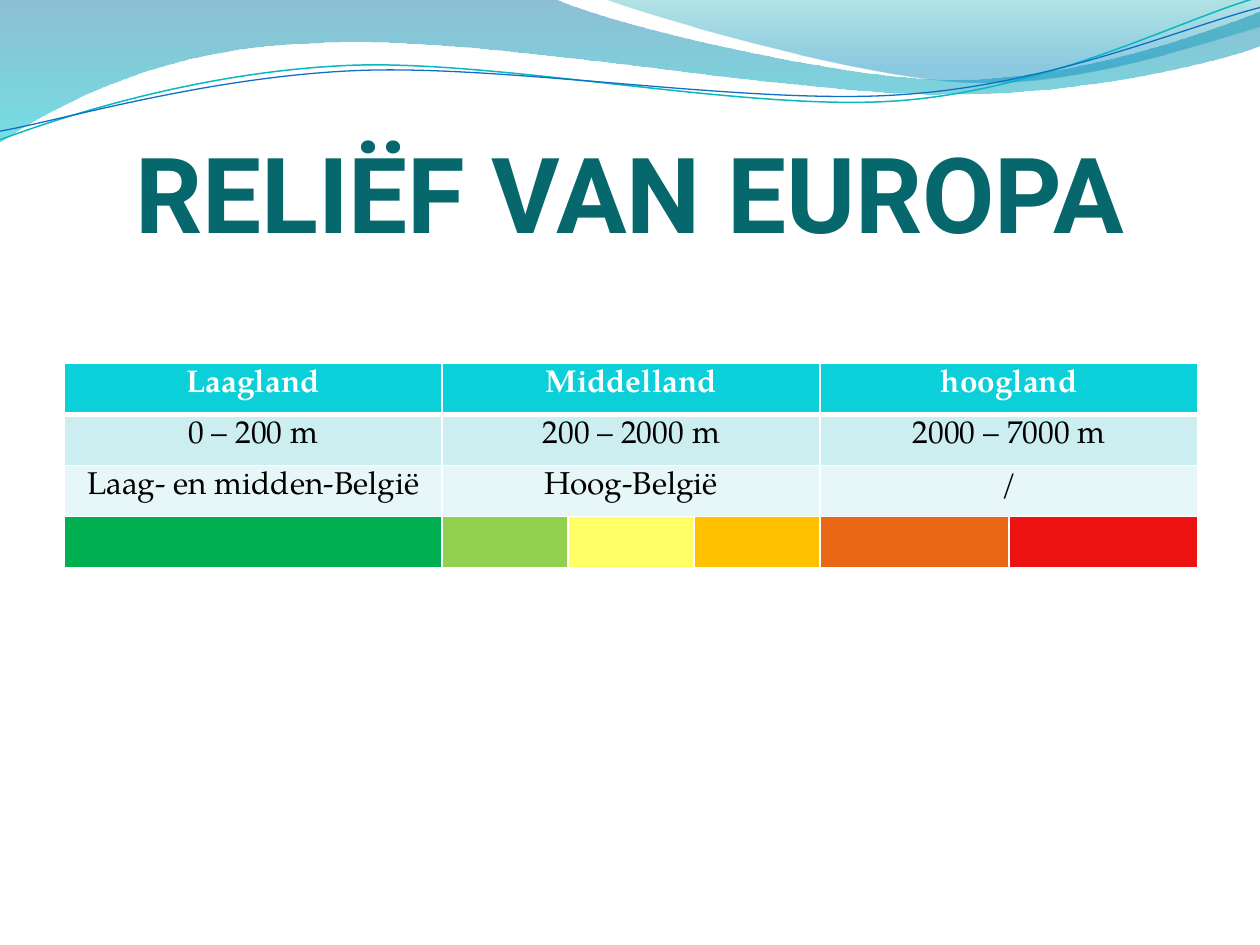
from lxml.etree import SubElement
from pptx import Presentation
from pptx.dml.color import RGBColor
from pptx.enum.text import MSO_ANCHOR as Anchor, PP_ALIGN as Align
from pptx.oxml import parse_xml
from pptx.oxml.ns import nsdecls, qn
from pptx.util import Pt

COLORS = {
    "title": "06686C", "header": "0BD0D9", "range": "CCEEF1", "belgium": "E7F7F8",
    "white": "FFFFFF", "black": "000000", "teal line": "0AB8BF", "blue line": "0F6FC6",
    "band top": "0074A1", "band bottom": "00C6CF",
    "corner top": "00A1A9", "corner bottom": "008BBF",
    "green": "00B050", "light green": "92D050", "yellow": "FFFF66",
    "amber": "FFC000", "orange": "EA6716", "red": "ED1313",
}
BAND = [
    (0, 0), (316.8, -0.7),
    (342.7, 12.2, 478.1, 45.4, 545.8, 45.4), (614.2, 45.4, 689.8, 18.7, 720, 6.5),
    (720.7, 25.9),
    (707.8, 31.7, 626.4, 54.7, 537.1, 54), (447.8, 54, 275, 20.2, 185, 24.5),
    (92.9, 25.9, 33.1, 59.8, -0.7, 81.4), (0, 0),
]
CORNER = [
    (344.9, -0.7),
    (366.5, 7.9, 491, 44.6, 553.7, 46.8), (616.3, 49.7, 691.9, 23, 720, 15.1),
    (720, 0), (344.9, -0.7),
]
TEAL_LINE = [
    (0, 79.9), (34.6, 67, 113.8, 41, 199.4, 37.4),
    (284.4, 33.8, 427, 64.1, 513.4, 57.6), (599.8, 51.1, 675.4, 10.8, 718.6, -1.4),
]
BLUE_LINE = [
    (0, 74.9), (33.8, 69.1, 118.1, 43.9, 203.8, 40.3),
    (290.2, 36.7, 429.8, 60.5, 516.2, 54), (601.9, 48.2, 677.5, 15.1, 720, 4.3),
]
ROWS = [
    ("header", "white", ["Laagland", "Middelland", "hoogland"]),
    ("range", "black", ["0 – 200 m", "200 – 2000 m", "2000 – 7000 m"]),
    ("belgium", "black", ["Laag- en midden-België", "Hoog-België", "/"]),
]
SPANS = [(0, 0), (1, 3), (4, 5)]
LEGEND = ["green", "light green", "yellow", "amber", "orange", "red"]


def rgb(name):
    """Return the named colour."""
    return RGBColor.from_string(COLORS[name])


def add_outline(slide, left, top, segments, close):
    """Add a freeform of lines and cubic curves relative to the given corner."""
    ends = [(Pt(left + segment[-2]), Pt(top + segment[-1])) for segment in segments]
    builder = slide.shapes.build_freeform(*ends[0], scale=1.0)
    builder.add_line_segments(ends[1:], close=close)
    shape = builder.convert_to_shape()
    shape.shadow.inherit = False
    lines = list(shape.element.spPr.iter(qn("a:lnTo")))
    for line, segment in zip(lines, segments[1:]):
        if len(segment) == 6:
            curve = parse_xml(f'<a:cubicBezTo {nsdecls("a")}/>')
            for x, y in zip(segment[::2], segment[1::2]):
                SubElement(curve, qn("a:pt"), x=str(Pt(left + x) - shape.left),
                           y=str(Pt(top + y) - shape.top))
            line.getparent().replace(line, curve)
    return shape


def add_waves(slide, left, top):
    """Add the translucent waves and the two thin lines."""
    areas = [
        (BAND, [("band top", 0, 45), ("band bottom", 1, 55)]),
        (CORNER, [("corner top", 0, 30), ("corner bottom", 0.8, 45)]),
    ]
    for segments, stops in areas:
        shape = add_outline(slide, left, top, segments, True)
        shape.line.fill.background()
        shape.fill.gradient()
        shape.fill.gradient_angle = 270
        for stop, (name, position, _) in zip(shape.fill.gradient_stops, stops):
            stop.color.rgb = rgb(name)
            stop.position = position
        for color, (_, _, opacity) in zip(
                shape.element.spPr.iter(qn("a:srgbClr")), stops):
            SubElement(color, qn("a:alpha"), val=str(opacity * 1000))
    for segments, name, width in [(TEAL_LINE, "teal line", 0.85),
                                  (BLUE_LINE, "blue line", 0.75)]:
        shape = add_outline(slide, left, top, segments, False)
        shape.fill.background()
        shape.line.color.rgb = rgb(name)
        shape.line.width = Pt(width)


def add_title(slide, left, top, width, height):
    """Place and format the title in front of the waves."""
    title = slide.shapes.title
    slide.shapes.element.append(title.element)
    title.left, title.top, title.width, title.height = map(Pt, (left, top, width, height))
    frame = title.text_frame
    frame.text = "RELIËF VAN EUROPA"
    frame.vertical_anchor = Anchor.BOTTOM
    frame.margin_left = frame.margin_right = frame.margin_bottom = 0
    frame.margin_top = Pt(3.6)
    paragraph = frame.paragraphs[0]
    paragraph.alignment = Align.CENTER
    font = paragraph.font
    font.name, font.size, font.bold = "Roboto", Pt(60), True
    font.color.rgb = rgb("title")


def set_borders(cell, top, bottom):
    """Give a cell white borders of the given top and bottom widths."""
    properties = cell._tc.get_or_add_tcPr()
    for index, (side, width) in enumerate(
            [("L", 1), ("R", 1), ("T", top), ("B", bottom)]):
        properties.insert(index, parse_xml(
            f'<a:ln{side} {nsdecls("a")} w="{Pt(width)}"><a:solidFill>'
            f'<a:srgbClr val="{COLORS["white"]}"/></a:solidFill></a:ln{side}>'))


def add_relief_table(slide, left, top, width, height):
    """Add the table of heights with its colour legend."""
    row_count = len(ROWS) + 1
    table = slide.shapes.add_table(
        row_count, len(LEGEND), *map(Pt, (left, top, width, height))).table
    table.horz_banding = False
    for column, share in zip(table.columns, [3, 1, 1, 1, 1.5, 1.5]):
        column.width = Pt(width * share / 9)
    fills = [[fill] * len(LEGEND) for fill, _, _ in ROWS] + [LEGEND]
    for row_index, row in enumerate(table.rows):
        row.height = Pt(height / row_count)
        for cell, fill in zip(row.cells, fills[row_index]):
            cell.fill.solid()
            cell.fill.fore_color.rgb = rgb(fill)
            set_borders(cell, 3 if row_index == 1 else 1, 3 if row_index == 0 else 1)
            cell.text_frame.paragraphs[0].font.size = Pt(18)
    for row_index, (_, color, texts) in enumerate(ROWS):
        for (first, last), text in zip(SPANS, texts):
            cell = table.cell(row_index, first)
            if last > first:
                cell.merge(table.cell(row_index, last))
            cell.text = text
            paragraph = cell.text_frame.paragraphs[0]
            paragraph.alignment = Align.CENTER
            font = paragraph.font
            font.name, font.size = "TeX Gyre Pagella", Pt(18)
            font.bold = row_index == 0
            font.color.rgb = rgb(color)


def main():
    """Build and save the slide."""
    presentation = Presentation()
    presentation.slide_width, presentation.slide_height = Pt(720), Pt(540)
    slide = presentation.slides.add_slide(presentation.slide_layouts[5])
    add_waves(slide, 0, 0)
    add_title(slide, 36, 55.5, 648, 90)
    add_relief_table(slide, 36.7, 207.5, 648, 116.8)
    presentation.save("out.pptx")


if __name__ == "__main__":
    main()
